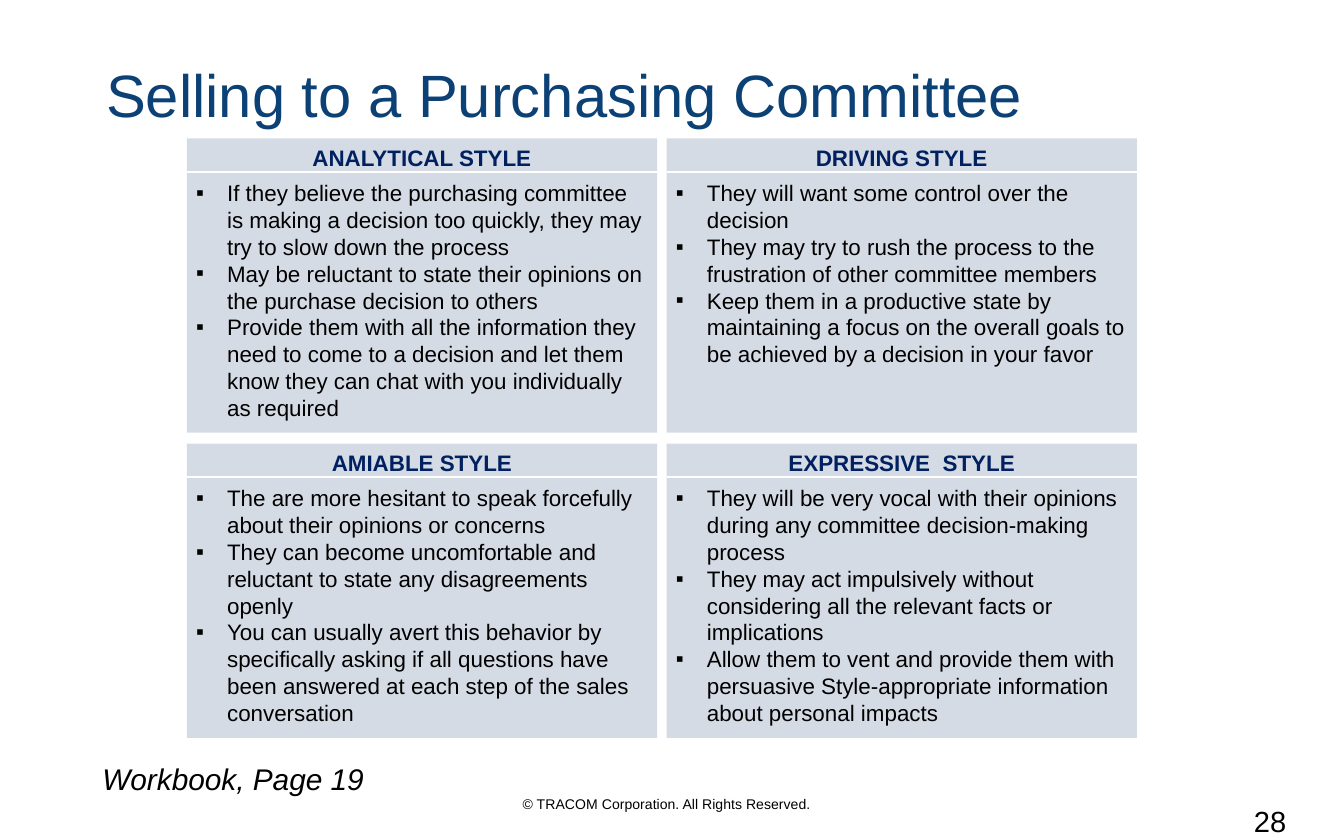
from lxml import etree
from pptx import Presentation
from pptx.dml.color import RGBColor
from pptx.enum import shapes, text
from pptx.oxml.ns import qn
from pptx.util import Inches, Pt

BLACK = RGBColor(0x00, 0x00, 0x00)
WHITE = RGBColor(0xFF, 0xFF, 0xFF)
TITLE_BLUE = RGBColor(0x0C, 0x41, 0x76)
HEADING_NAVY = RGBColor(0x00, 0x20, 0x60)
CARD_GREY = RGBColor(0xD5, 0xDB, 0xE5)

CARD_LEFT, CARD_TOP = 1.39, 1.03
CARD_WIDTH, CARD_HEIGHT = 3.5, 2.19
COLUMN_STEP, ROW_STEP = 3.57, 2.27
RULE_OFFSET = 0.25
BULLET_INDENT = Inches(0.23)

CARDS = [
    ("ANALYTICAL STYLE", [
        "If they believe the purchasing committee is making a decision too quickly, they may try to slow down the process",
        "May be reluctant to state their opinions on the purchase decision to others",
        "Provide them with all the information they need to come to a decision and let them know they can chat with you individually as required",
    ]),
    ("DRIVING STYLE", [
        "They will want some control over the decision",
        "They may try to rush the process to the frustration of other committee members",
        "Keep them in a productive state by maintaining a focus on the overall goals to be achieved by a decision in your favor",
    ]),
    ("AMIABLE STYLE", [
        "The are more hesitant to speak forcefully about their opinions or concerns",
        "They can become uncomfortable and reluctant to state any disagreements openly",
        "You can usually avert this behavior by specifically asking if all questions have been answered at each step of the sales conversation",
    ]),
    ("EXPRESSIVE  STYLE", [
        "They will be very vocal with their opinions during any committee decision-making process",
        "They may act impulsively without considering all the relevant facts or implications",
        "Allow them to vent and provide them with persuasive Style-appropriate information about personal impacts",
    ]),
]

LABELS = [
    ("© TRACOM Corporation. All Rights Reserved.", (3.26, 5.87, 3.4, 0.23), {"size": Pt(7.5)}),
    ("Workbook, Page 19", (0.61, 5.61, 2.25, 0.37), {"size": Pt(16), "italic": True}),
    ("28", (9.07, 5.93, 0.76, 0.33), {"size": Pt(15.6)}),
]


def write(paragraph, words, color, alignment, **font_format):
    paragraph.text = words
    paragraph.alignment = alignment
    paragraph.font.color.rgb = color
    for name, value in {"name": "Arial", **font_format}.items():
        setattr(paragraph.font, name, value)


def add_bullet(paragraph):
    properties = paragraph._p.get_or_add_pPr()
    properties.set("marL", str(BULLET_INDENT))
    properties.set("indent", str(-BULLET_INDENT))
    etree.SubElement(properties, qn("a:buFont"), typeface="Arial")
    etree.SubElement(properties, qn("a:buChar"), char="▪")


presentation = Presentation()
presentation.slide_width = Inches(10)
presentation.slide_height = Inches(6.25)
slide = presentation.slides.add_slide(presentation.slide_layouts[5])

title = slide.shapes.title
title.left, title.top, title.width, title.height = map(Inches, (0.69, 0.34, 7.5, 0.78))
title.text_frame.vertical_anchor = text.MSO_ANCHOR.MIDDLE
title_paragraph = title.text_frame.paragraphs[0]
write(title_paragraph, "Selling to a Purchasing Committee", TITLE_BLUE,
      text.PP_ALIGN.LEFT, size=Pt(32))
title_paragraph.line_spacing = 0.9

for index, (heading, points) in enumerate(CARDS):
    row, column = divmod(index, 2)
    left = CARD_LEFT + column * COLUMN_STEP
    top = CARD_TOP + row * ROW_STEP
    card = slide.shapes.add_shape(
        shapes.MSO_SHAPE.RECTANGLE,
        *map(Inches, (left, top, CARD_WIDTH, CARD_HEIGHT)))
    card.shadow.inherit = False
    card.fill.solid()
    card.fill.fore_color.rgb = CARD_GREY
    card.line.fill.background()

    frame = card.text_frame
    frame_format = {
        "word_wrap": True, "vertical_anchor": text.MSO_ANCHOR.TOP,
        "margin_left": Inches(0.07), "margin_right": Inches(0.07),
        "margin_top": Inches(0.04), "margin_bottom": Inches(0.04),
    }
    for name, value in frame_format.items():
        setattr(frame, name, value)
    write(frame.paragraphs[0], heading, HEADING_NAVY, text.PP_ALIGN.CENTER,
          size=Pt(12), bold=True)
    frame.paragraphs[0].space_after = Pt(4.5)
    for point in points:
        paragraph = frame.add_paragraph()
        add_bullet(paragraph)
        write(paragraph, point, BLACK, text.PP_ALIGN.LEFT, size=Pt(12))

    rule_top = top + RULE_OFFSET
    rule = slide.shapes.add_connector(
        shapes.MSO_CONNECTOR.STRAIGHT,
        *map(Inches, (left, rule_top, left + CARD_WIDTH, rule_top)))
    rule.line.color.rgb = WHITE
    rule.line.width = Pt(1)
    etree.SubElement(rule._element.spPr, qn("a:effectLst"))

for words, place, font_format in LABELS:
    label = slide.shapes.add_textbox(*map(Inches, place))
    label.text_frame.word_wrap = True
    write(label.text_frame.paragraphs[0], words, BLACK, text.PP_ALIGN.CENTER, **font_format)

presentation.save("out.pptx")
